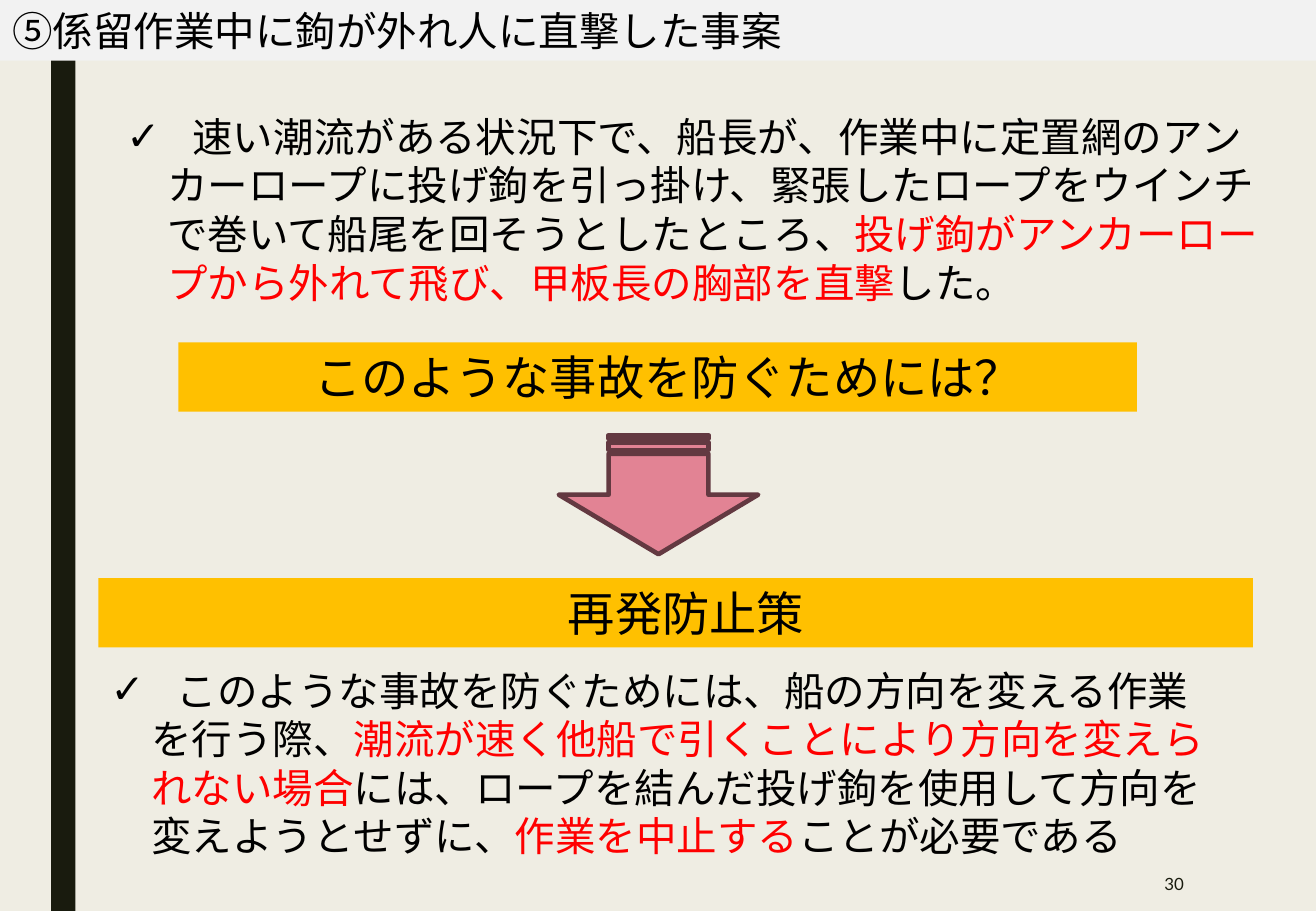
from dataclasses import dataclass

from lxml import etree
from pptx import Presentation
from pptx.dml.color import RGBColor
from pptx.enum.shapes import MSO_SHAPE
from pptx.enum.text import MSO_ANCHOR, MSO_AUTO_SIZE, PP_ALIGN
from pptx.oxml.ns import qn
from pptx.util import Cm, Pt

RECTANGLE = MSO_SHAPE.RECTANGLE
STRIPED_ARROW = MSO_SHAPE.STRIPED_RIGHT_ARROW
TOP, MIDDLE = MSO_ANCHOR.TOP, MSO_ANCHOR.MIDDLE
LEFT, CENTER, RIGHT = PP_ALIGN.LEFT, PP_ALIGN.CENTER, PP_ALIGN.RIGHT
NO_AUTOFIT = MSO_AUTO_SIZE.NONE


@dataclass(frozen=True)
class Theme:
    background: str = "EFEDE3"
    dark: str = "191B0E"
    title_fill: str = "F2F2F2"
    text: str = "000000"
    accent: str = "FF0000"
    band: str = "FFC000"
    arrow: str = "E28394"
    arrow_line: str = "633941"
    font: str = "Arial"
    number_font: str = "Lato"
    text_size: int = 24
    band_size: int = 28
    number_size: int = 10


THEME = Theme()
PLAIN, RED = THEME.text, THEME.accent
HANGING, CHECK_INDENT, BAND_INDENT = 0.85, 1.38, 0.43

INCIDENT = [
    [("速い潮流がある状況下で、船長が、作業中に定置網のアン", PLAIN)],
    [("カーロープに投げ鉤を引っ掛け、緊張したロープをウインチ", PLAIN)],
    [("で巻いて船尾を回そうとしたところ、", PLAIN), ("投げ鉤がアンカーロー", RED)],
    [("プから外れて飛び、甲板長の胸部を直撃", RED), ("した。", PLAIN)],
]
PREVENTION = [
    [("このような事故を防ぐためには、船の方向を変える作業", PLAIN)],
    [("を行う際、", PLAIN), ("潮流が速く他船で引くことにより方向を変えら", RED)],
    [("れない場合", RED), ("には、ロープを結んだ投げ鉤を使用して方向を", PLAIN)],
    [("変えようとせずに、", PLAIN), ("作業を中止する", RED), ("ことが必要である", PLAIN)],
]


def rgb(color):
    return RGBColor.from_string(color)


def place(shape, left, top, width, height):
    shape.left, shape.top = Cm(left), Cm(top)
    shape.width, shape.height = Cm(width), Cm(height)


def fill(shape, color):
    shape.fill.solid()
    shape.fill.fore_color.rgb = rgb(color)


def prepare_frame(shape, anchor):
    frame = shape.text_frame
    frame.word_wrap = True
    frame.auto_size = NO_AUTOFIT
    frame.vertical_anchor = anchor
    return frame


def set_indent(para, margin, first_line, bullet=None):
    """Set the indents in centimetres and the bullet character, if any."""
    properties = para._p.get_or_add_pPr()
    properties.set("marL", str(Cm(margin)))
    properties.set("indent", str(Cm(first_line)))
    if bullet:
        etree.SubElement(properties, qn("a:buFont")).set("typeface", THEME.font)
        etree.SubElement(properties, qn("a:buChar")).set("char", bullet)
    else:
        etree.SubElement(properties, qn("a:buNone"))


def add_span(para, text, size=THEME.text_size, color=THEME.text, font=THEME.font):
    span = para.add_run()
    span.text = text
    span.font.name = font
    span.font.size = Pt(size)
    span.font.color.rgb = rgb(color)


def add_block(page, kind, at, color):
    block = page.shapes.add_shape(kind, *map(Cm, at))
    block.shadow.inherit = False
    fill(block, color)
    block.line.fill.background()
    return block


def add_side_bar(page):
    """Add the dark bar behind everything else on the page."""
    bar = add_block(page, RECTANGLE, (1.07, 0, 0.51, 19.05), THEME.dark)
    page.shapes.element.insert(2, bar.element)


def fill_title(title, text):
    place(title, 0, 0, 27.51, 1.27)
    fill(title, THEME.title_fill)
    para = prepare_frame(title, MIDDLE).paragraphs[0]
    para.alignment = LEFT
    add_span(para, text)


def fill_checklist(body, at, lines):
    """Write one checked item, one paragraph for each fixed line."""
    place(body, *at)
    frame = prepare_frame(body, TOP)
    for number, line in enumerate(lines):
        para = frame.add_paragraph() if number else frame.paragraphs[0]
        para.space_before = Pt(0)
        if number:
            set_indent(para, HANGING, 0)
        else:
            set_indent(para, CHECK_INDENT, -CHECK_INDENT, "✓")
        for text, color in line:
            add_span(para, text, color=color)


def add_band(page, at, text):
    band = add_block(page, RECTANGLE, at, THEME.band)
    para = prepare_frame(band, MIDDLE).paragraphs[0]
    para.alignment = CENTER
    set_indent(para, 0, BAND_INDENT)
    add_span(para, text, THEME.band_size)


def add_down_arrow(page, at):
    arrow = add_block(page, STRIPED_ARROW, at, THEME.arrow)
    arrow.rotation = 90
    arrow.line.color.rgb = rgb(THEME.arrow_line)
    arrow.line.width = Pt(2.75)


def add_page_number(page, at, text):
    box = page.shapes.add_textbox(*map(Cm, at))
    para = prepare_frame(box, MIDDLE).paragraphs[0]
    para.alignment = RIGHT
    add_span(para, text, THEME.number_size, THEME.dark, THEME.number_font)


def main():
    deck = Presentation()
    deck.slide_width, deck.slide_height = Cm(27.51), Cm(19.05)
    page = deck.slides.add_slide(deck.slide_layouts.get_by_name("Two Content"))
    fill(page.background, THEME.background)
    title, incident, prevention = page.placeholders

    add_side_bar(page)
    fill_title(title, "⑤係留作業中に鉤が外れ人に直撃した事案")
    fill_checklist(incident, (2.39, 2.21, 24.38, 4.37), INCIDENT)
    add_band(page, (3.73, 7.16, 20.04, 1.45), "このような事故を防ぐためには？")
    add_down_arrow(page, (12.52, 8.26, 2.49, 4.17))
    add_band(page, (2.06, 12.09, 24.13, 1.45), "再発防止策")
    fill_checklist(prevention, (2.06, 13.79, 24.13, 4.37), PREVENTION)
    add_page_number(page, (21.39, 17.93, 3.61, 1.12), "30")
    deck.save("out.pptx")


if __name__ == "__main__":
    main()
